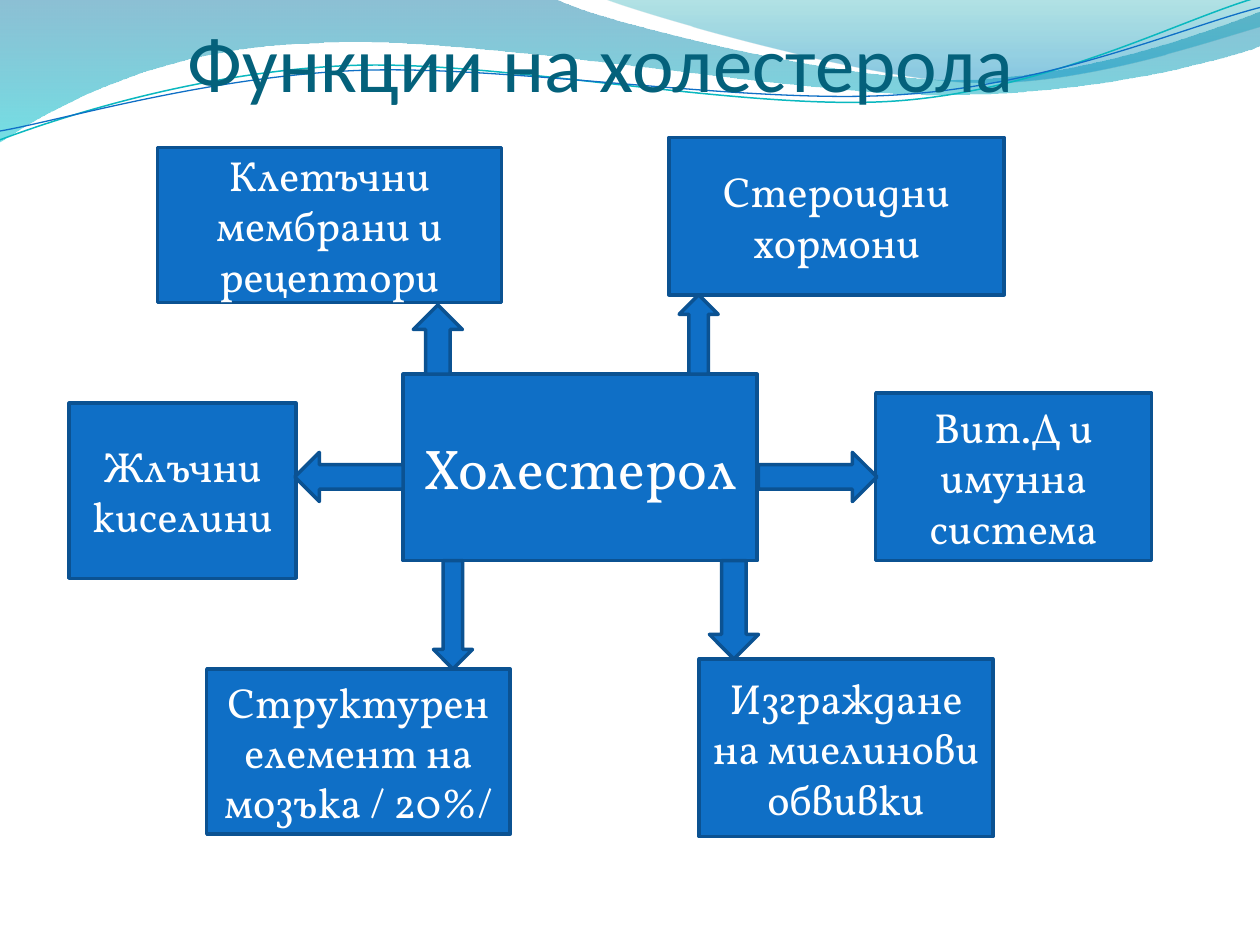
import math

import pptx
import pptx.dml.color
import pptx.enum.lang
import pptx.enum.shapes
import pptx.enum.text
import pptx.oxml
import pptx.oxml.ns
import pptx.util

Inches = pptx.util.Inches
RGBColor = pptx.dml.color.RGBColor
SHAPE = pptx.enum.shapes.MSO_SHAPE
ALIGN = pptx.enum.text.PP_ALIGN
ANCHOR = pptx.enum.text.MSO_ANCHOR
qn = pptx.oxml.ns.qn

BLUE = RGBColor(0x0F, 0x6F, 0xC6)
DARK_BLUE = RGBColor(0x0B, 0x52, 0x92)
TITLE_TEAL = RGBColor(0x04, 0x61, 0x7B)
WHITE = RGBColor(0xFF, 0xFF, 0xFF)
WAVE_BLUE = RGBColor(0x00, 0x74, 0xA1)
WAVE_CYAN = RGBColor(0x00, 0xC6, 0xCF)
CREST_TEAL = RGBColor(0x00, 0xA1, 0xA9)
CREST_BLUE = RGBColor(0x00, 0x8B, 0xBF)
LINE_TEAL = RGBColor(0x0A, 0xB8, 0xBF)

STRAND_TILT = -2.7

BANDS = [
    ([(0, 0), (4.4, -0.01), (4.76, 0.17, 6.64, 0.63, 7.58, 0.63),
      (8.53, 0.63, 9.58, 0.26, 10, 0.09), (10.01, 0.36),
      (9.83, 0.44, 8.7, 0.76, 7.46, 0.75), (6.22, 0.75, 3.82, 0.28, 2.57, 0.34),
      (1.29, 0.36, 0.46, 0.83, -0.01, 1.13)],
     [(0, WAVE_BLUE, 45), (1, WAVE_CYAN, 55)]),
    ([(4.79, -0.01), (5.09, 0.11, 6.82, 0.62, 7.69, 0.65),
      (8.56, 0.69, 9.61, 0.32, 10, 0.21), (10, 0)],
     [(0, CREST_TEAL, 30), (0.8, CREST_BLUE, 45)]),
]
STRANDS = [
    ([(0, 1.11), (0.48, 0.93, 1.58, 0.57, 2.77, 0.52),
      (3.95, 0.47, 5.93, 0.89, 7.13, 0.8), (8.33, 0.71, 9.38, 0.15, 9.98, -0.02)],
     (4.99, 0.57), LINE_TEAL, 0.85),
    ([(0, 1.04), (0.47, 0.96, 1.64, 0.61, 2.83, 0.56),
      (4.03, 0.51, 5.97, 0.84, 7.17, 0.75), (8.36, 0.67, 9.41, 0.21, 10, 0.06)],
     (5, 0.59), BLUE, 0.75),
]
NODES = [
    ("Холестерол", 32, (2.65, 1.88, 2.81, 1.48)),
    ("Клетъчни мембрани и рецептори", 24, (0.7, 0.08, 2.73, 1.23)),
    ("Стероидни хормони", 24, (4.76, 0, 2.66, 1.25)),
    ("Вит.Д и имунна система", 24, (6.4, 2.03, 2.19, 1.33)),
    ("Жлъчни киселини", 24, (0, 2.11, 1.8, 1.39)),
    ("Структурен елемент на мозъка / 20%/", 24, (1.09, 4.22, 2.41, 1.31)),
    ("Изграждане на миелинови обвивки", 24, (5, 4.14, 2.33, 1.41)),
]
ARROWS = [
    (SHAPE.RIGHT_ARROW, (5.47, 2.5, 0.94, 0.39)),
    (SHAPE.LEFT_ARROW, (1.79, 2.5, 0.86, 0.39)),
    (SHAPE.DOWN_ARROW, (2.89, 3.36, 0.31, 0.86)),
    (SHAPE.DOWN_ARROW, (5.08, 3.36, 0.39, 0.78)),
    (SHAPE.UP_ARROW, (2.73, 1.33, 0.39, 0.55)),
    (SHAPE.UP_ARROW, (4.84, 1.25, 0.31, 0.63)),
]


def set_values(target, values):
    """Set each named attribute of the target."""
    for name, value in values.items():
        setattr(target, name, value)


def turn_point(point, center, degrees):
    """Turn a point clockwise about a center."""
    angle = math.radians(degrees)
    x, y = point[0] - center[0], point[1] - center[1]
    return (center[0] + x * math.cos(angle) - y * math.sin(angle),
            center[1] + x * math.sin(angle) + y * math.cos(angle))


def add_outline(page, box, steps, close, center=(0, 0), tilt=0):
    """Draw an outline of lines and cubic curves, tilted about its center."""
    points = [step[index:index + 2] for step in steps for index in range(0, len(step), 2)]
    corners = []
    for point in points:
        x, y = turn_point(point, center, -tilt)
        corners.append((Inches(box[0] + x), Inches(box[1] + y)))
    builder = page.shapes.build_freeform(*corners[0])
    builder.add_line_segments(corners[1:], close=close)
    shape = builder.convert_to_shape()
    set_values(shape, {"rotation": tilt % 360})
    shape.shadow.inherit = False
    segments = iter(list(shape.element.spPr.iter(qn("a:lnTo"))))
    for step in steps[1:]:
        segment = next(segments)
        if len(step) == 6:
            curve = pptx.oxml.parse_xml(f'<a:cubicBezTo {pptx.oxml.ns.nsdecls("a")}/>')
            segment.addprevious(curve)
            for part in (segment, next(segments), next(segments)):
                curve.append(part[0])
                part.getparent().remove(part)
    return shape


def add_waves(page, box):
    """Place the shaded bands and thin strands of the header."""
    for steps, stops in BANDS:
        band = add_outline(page, box, steps, True)
        band.line.fill.background()
        band.fill.gradient()
        band.fill.gradient_angle = 270
        for stop, (position, color, _) in zip(band.fill.gradient_stops, stops):
            set_values(stop, {"position": position})
            stop.color.rgb = color
        colors = band.element.spPr.iter(qn("a:srgbClr"))
        for color, (_, _, opacity) in zip(colors, stops):
            alpha = pptx.oxml.parse_xml(
                f'<a:alpha {pptx.oxml.ns.nsdecls("a")} val="{opacity * 1000}"/>')
            color.append(alpha)
    for steps, center, color, width in STRANDS:
        strand = add_outline(page, box, steps, False, center, STRAND_TILT)
        strand.fill.background()
        strand.line.color.rgb = color
        strand.line.width = pptx.util.Pt(width)


def write_text(frame, text, size, font, color, alignment):
    """Write one formatted Bulgarian paragraph into the text frame."""
    para = frame.paragraphs[0]
    para.alignment = alignment
    span = para.add_run()
    span.text = text
    set_values(span.font, {"size": pptx.util.Pt(size), "name": font,
                           "language_id": pptx.enum.lang.MSO_LANGUAGE_ID.BULGARIAN})
    span.font.color.rgb = color


def add_title(page, box):
    """Fill the title placeholder and bring it in front of the waves."""
    title = page.shapes.title
    left, top, width, height = map(Inches, box)
    set_values(title, {"left": left, "top": top, "width": width, "height": height})
    set_values(title.text_frame, {
        "margin_left": Inches(0.99), "margin_top": Inches(0.05),
        "margin_right": 0, "margin_bottom": 0,
        "word_wrap": True, "vertical_anchor": ANCHOR.BOTTOM,
        "auto_size": pptx.enum.text.MSO_AUTO_SIZE.NONE,
    })
    write_text(title.text_frame, "Функции на холестерола", 45, "Calibri",
               TITLE_TEAL, ALIGN.LEFT)
    title.element.getparent().append(title.element)


def add_block(page, box, kind, place):
    """Draw a blue shape at a place inside the box."""
    left, top, width, height = place
    shape = page.shapes.add_shape(kind, Inches(box[0] + left), Inches(box[1] + top),
                                  Inches(width), Inches(height))
    shape.shadow.inherit = False
    shape.fill.solid()
    shape.fill.fore_color.rgb = BLUE
    shape.line.color.rgb = DARK_BLUE
    shape.line.width = pptx.util.Pt(2)
    return shape


def add_diagram(page, box):
    """Place the central block, its functions and the arrows between them."""
    for text, size, place in NODES:
        node = add_block(page, box, SHAPE.RECTANGLE, place)
        set_values(node.text_frame, {"word_wrap": True, "vertical_anchor": ANCHOR.MIDDLE})
        write_text(node.text_frame, text, size, "Vollkorn", WHITE, ALIGN.CENTER)
    for kind, place in ARROWS:
        add_block(page, box, kind, place)


def main():
    """Build the slide and save it."""
    deck = pptx.Presentation()
    set_values(deck, {"slide_width": Inches(10), "slide_height": Inches(7.5)})
    page = deck.slides.add_slide(deck.slide_layouts.get_by_name("Title Only"))
    add_waves(page, (0, 0, 10, 1.13))
    add_title(page, (0.5, 0.3, 9, 0.56))
    add_diagram(page, (0.55, 1.09, 8.59, 5.55))
    deck.save("out.pptx")


if __name__ == "__main__":
    main()
